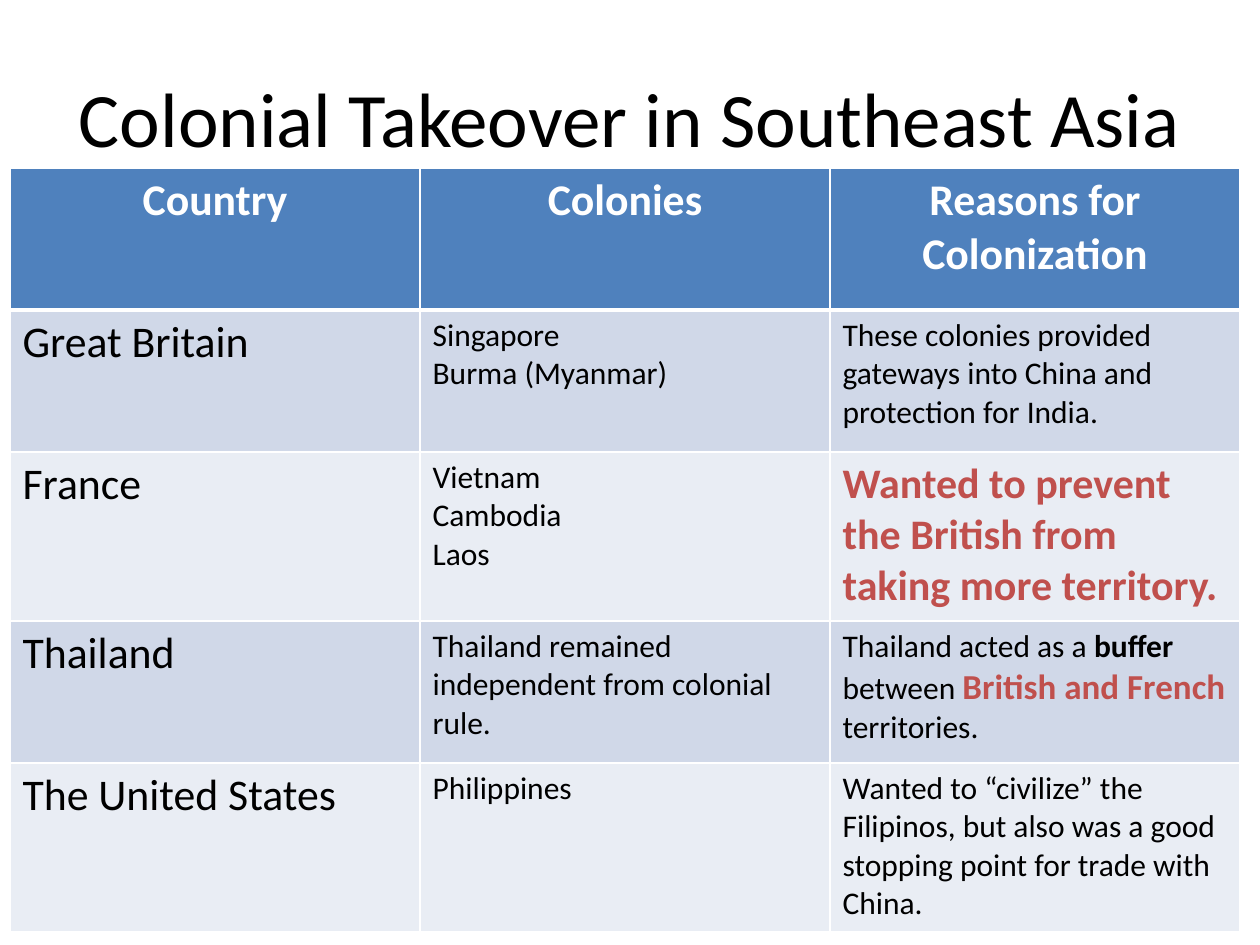
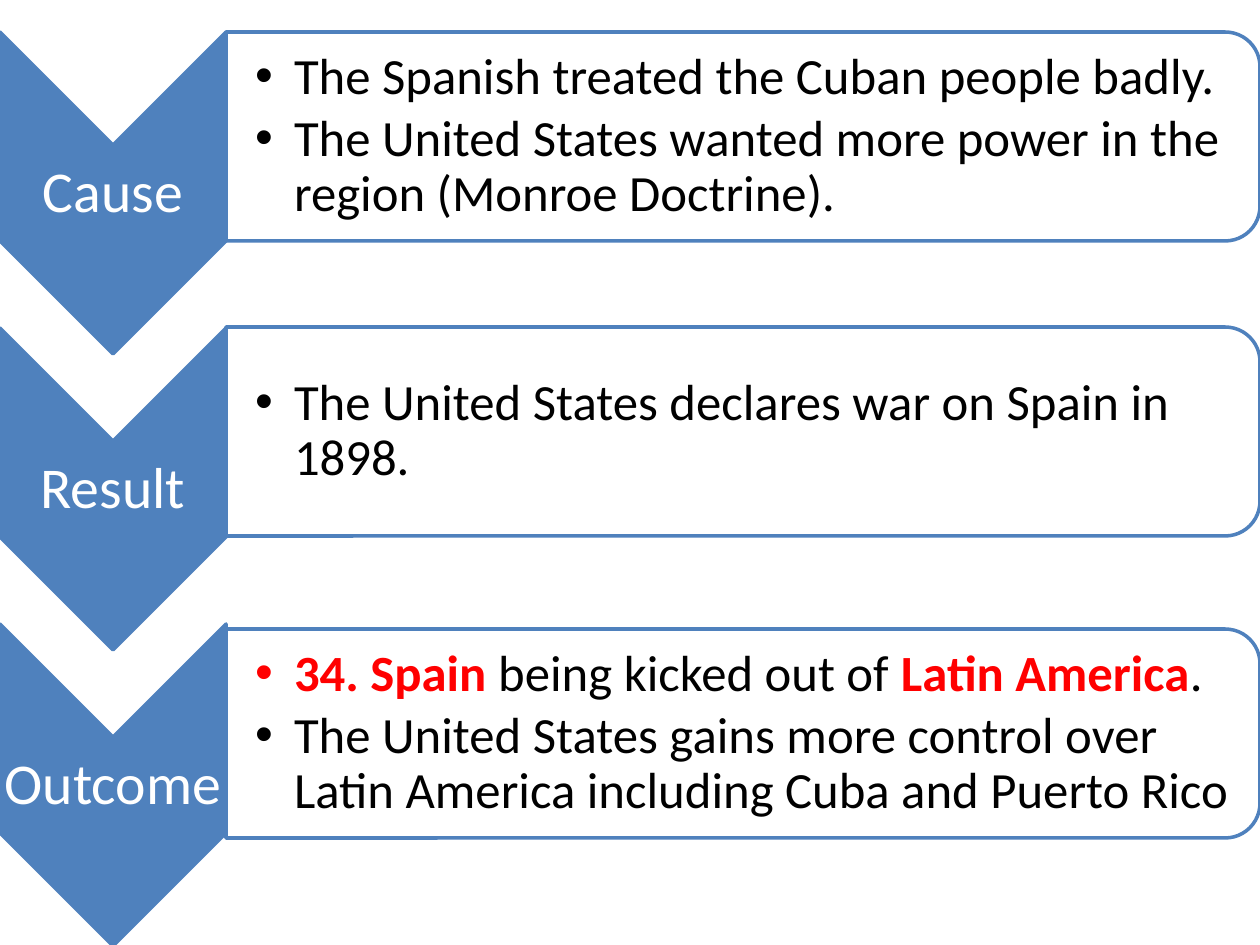
from collections import namedtuple

from lxml.etree import SubElement
from pptx import Presentation
from pptx.dml.color import RGBColor
from pptx.enum.shapes import MSO_SHAPE as Preset
from pptx.enum.text import MSO_ANCHOR as Anchor, PP_ALIGN as Align
from pptx.oxml.ns import qn
from pptx.util import Pt

EMU_PER_PX = 914400 / 126
FONT = "Calibri"
BLUE, WHITE, BLACK = "4F81BD", "FFFFFF", "000000"
BRICK, RED = "C0504D", "FF0000"
BAND_FILLS = ("D0D8E8", "E9EDF4")

Run = namedtuple("Run", "text size color bold", defaults=(BLACK, False))

COLUMN_WIDTH = 410
ROW_HEIGHTS = (142, 142, 169, 142, 169)
HEADERS = ("Country", "Colonies", "Reasons for Colonization")
COUNTRIES = (
    ("Great Britain", ("Singapore", "Burma (Myanmar)"),
     [Run("These colonies provided gateways into China and protection for India.", 18)]),
    ("France", ("Vietnam", "Cambodia", "Laos"),
     [Run("Wanted to prevent the British from taking more territory.", 24, BRICK, True)]),
    ("Thailand", ("Thailand remained independent from colonial rule.",),
     [Run("Thailand acted as a ", 18), Run("buffer", 18, BLACK, True),
      Run(" between ", 18), Run("British and French ", 20, BRICK, True),
      Run("territories.", 18)]),
    ("The United States", ("Philippines",),
     [Run("Wanted to “civilize” the Filipinos, but also was a good stopping point "
          "for trade with China.", 18)]),
)

CHEVRON_WIDTH, CHEVRON_HEIGHT = 226, 322
CHEVRON_TOP, CHEVRON_PITCH = 32, 296
PANEL_WIDTH, PANEL_HEIGHT = 1034, 209
STAGES = (
    ("Cause", 32,
     [[Run("The Spanish treated the Cuban people badly.", 29)],
      [Run("The United States wanted more power in the region (Monroe Doctrine).", 29)]]),
    ("Result", 327,
     [[Run("The United States declares war on Spain in 1898.", 29)]]),
    ("Outcome", 629,
     [[Run("34. Spain", 29, RED, True), Run(" being kicked out of ", 29),
       Run("Latin America", 29, RED, True), Run(".", 29)],
      [Run("The United States gains more control over Latin America including "
           "Cuba and Puerto Rico", 29)]]),
)


def px(*lengths):
    emus = [round(length * EMU_PER_PX) for length in lengths]
    return emus[0] if len(emus) == 1 else emus


def rgb(color):
    return RGBColor.from_string(color)


def write_paragraphs(text_frame, paragraphs, align=Align.LEFT):
    for index, runs in enumerate(paragraphs):
        paragraph = text_frame.add_paragraph() if index else text_frame.paragraphs[0]
        paragraph.alignment = align
        for item in runs:
            run = paragraph.add_run()
            run.text = item.text
            run.font.name = FONT
            run.font.size = Pt(item.size)
            run.font.bold = item.bold
            run.font.color.rgb = rgb(item.color)


def place_title(slide, text):
    title = slide.shapes.title
    title.left, title.top, title.width, title.height = px(63, 38, 1134, 157)
    title.text_frame.vertical_anchor = Anchor.MIDDLE
    write_paragraphs(title.text_frame, [[Run(text, 44)]], Align.CENTER)


def set_cell_borders(cell, bottom_width):
    properties = cell._tc.get_or_add_tcPr()
    widths = {"a:lnL": 1, "a:lnR": 1, "a:lnT": 1, "a:lnB": bottom_width}
    for position, (side, width) in enumerate(widths.items()):
        line = SubElement(properties, qn(side), w=str(Pt(width)))
        fill = SubElement(line, qn("a:solidFill"))
        SubElement(fill, qn("a:srgbClr"), val=WHITE)
        properties.insert(position, line)


def fill_cell(cell, paragraphs, color, align=Align.LEFT, bottom_width=1):
    cell.fill.solid()
    cell.fill.fore_color.rgb = rgb(color)
    write_paragraphs(cell.text_frame, paragraphs, align)
    set_cell_borders(cell, bottom_width)


def add_colony_table(slide):
    frame = slide.shapes.add_table(
        len(ROW_HEIGHTS), len(HEADERS),
        *px(10, 168, COLUMN_WIDTH * len(HEADERS), sum(ROW_HEIGHTS)))
    table = frame.table
    for column in table.columns:
        column.width = px(COLUMN_WIDTH)
    for row, height in zip(table.rows, ROW_HEIGHTS):
        row.height = px(height)
    for index, header in enumerate(HEADERS):
        fill_cell(table.cell(0, index), [[Run(header, 25, WHITE, True)]],
                  BLUE, Align.CENTER, 3)
    for index, (country, colonies, reason) in enumerate(COUNTRIES):
        contents = ([[Run(country, 25)]], [[Run(name, 18)] for name in colonies], [reason])
        for column, paragraphs in enumerate(contents):
            fill_cell(table.cell(index + 1, column), paragraphs, BAND_FILLS[index % 2])


def add_turned_shape(slide, preset, left, top, width, height, color):
    shift = (width - height) / 2
    shape = slide.shapes.add_shape(
        preset, *px(left + shift, top - shift, height, width))
    shape.rotation = 90
    shape.shadow.inherit = False
    shape.fill.solid()
    shape.fill.fore_color.rgb = rgb(color)
    shape.line.color.rgb = rgb(BLUE)
    shape.line.width = Pt(2)


def add_text(slide, left, top, width, height, paragraphs, align, left_inset=3):
    text_frame = slide.shapes.add_textbox(*px(left, top, width, height)).text_frame
    text_frame.word_wrap = True
    text_frame.vertical_anchor = Anchor.MIDDLE
    text_frame.margin_left = px(left_inset)
    text_frame.margin_top = text_frame.margin_right = text_frame.margin_bottom = px(3)
    write_paragraphs(text_frame, paragraphs, align)
    for paragraph in text_frame.paragraphs:
        paragraph.line_spacing = 0.9
    return text_frame


def add_bullets(text_frame):
    for paragraph in text_frame.paragraphs:
        paragraph.space_after = Pt(4)
        properties = paragraph._p.get_or_add_pPr()
        properties.set("marL", str(px(39)))
        properties.set("indent", str(px(-39)))
        SubElement(properties, qn("a:buFont"), typeface="Arial")
        SubElement(properties, qn("a:buChar"), char="•")


def add_stage(slide, index, label, panel_top, points):
    top = CHEVRON_TOP + index * CHEVRON_PITCH
    add_turned_shape(slide, Preset.CHEVRON, 0, top, CHEVRON_WIDTH, CHEVRON_HEIGHT, BLUE)
    add_text(slide, 0, top + 113, CHEVRON_WIDTH, 97,
             [[Run(label, 33, WHITE)]], Align.CENTER)
    add_turned_shape(slide, Preset.ROUND_2_SAME_RECTANGLE, CHEVRON_WIDTH, panel_top,
                     PANEL_WIDTH, PANEL_HEIGHT, WHITE)
    add_bullets(add_text(slide, CHEVRON_WIDTH, panel_top + 10, PANEL_WIDTH - 10,
                         PANEL_HEIGHT - 20, points, Align.LEFT, 29))


def main():
    presentation = Presentation()
    presentation.slide_width, presentation.slide_height = px(1260, 945)
    title_only, blank = presentation.slide_layouts[5], presentation.slide_layouts[6]

    colony_slide = presentation.slides.add_slide(title_only)
    place_title(colony_slide, "Colonial Takeover in Southeast Asia")
    add_colony_table(colony_slide)

    war_slide = presentation.slides.add_slide(blank)
    for index, stage in enumerate(STAGES):
        add_stage(war_slide, index, *stage)

    presentation.save("out.pptx")


if __name__ == "__main__":
    main()
